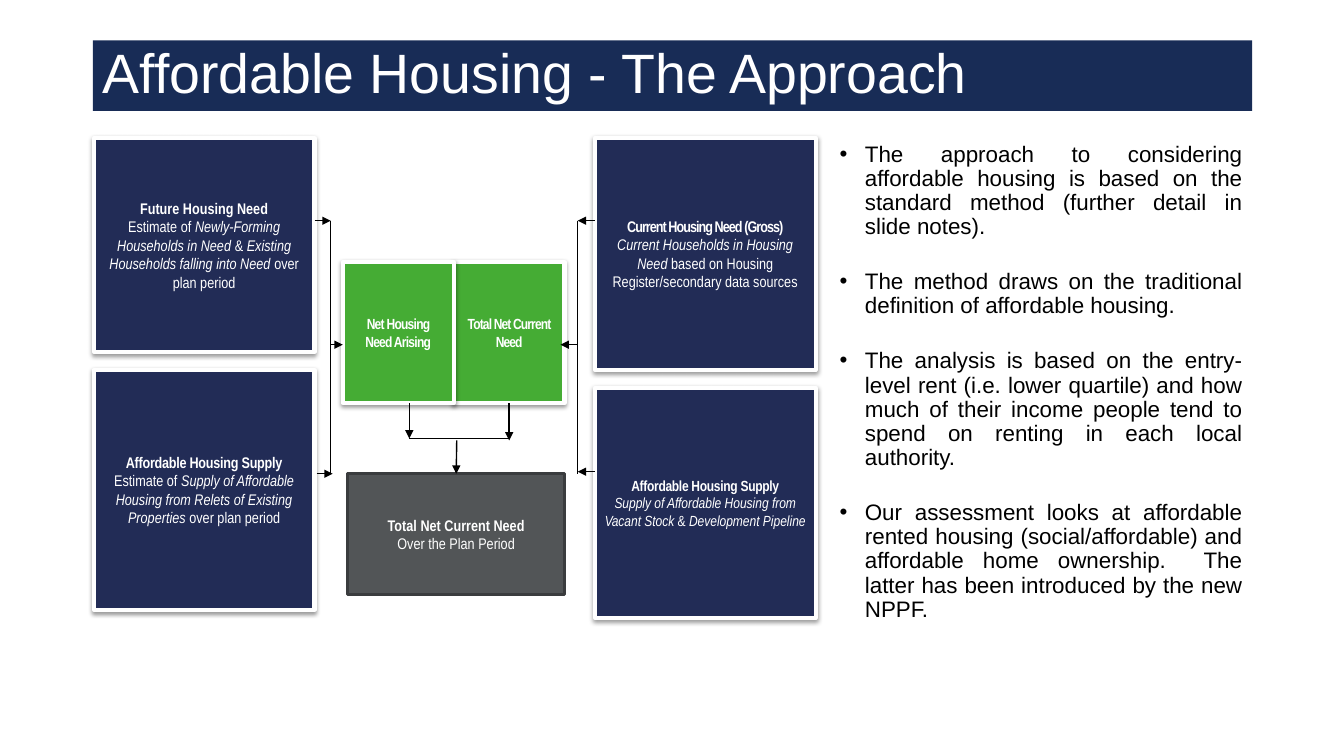
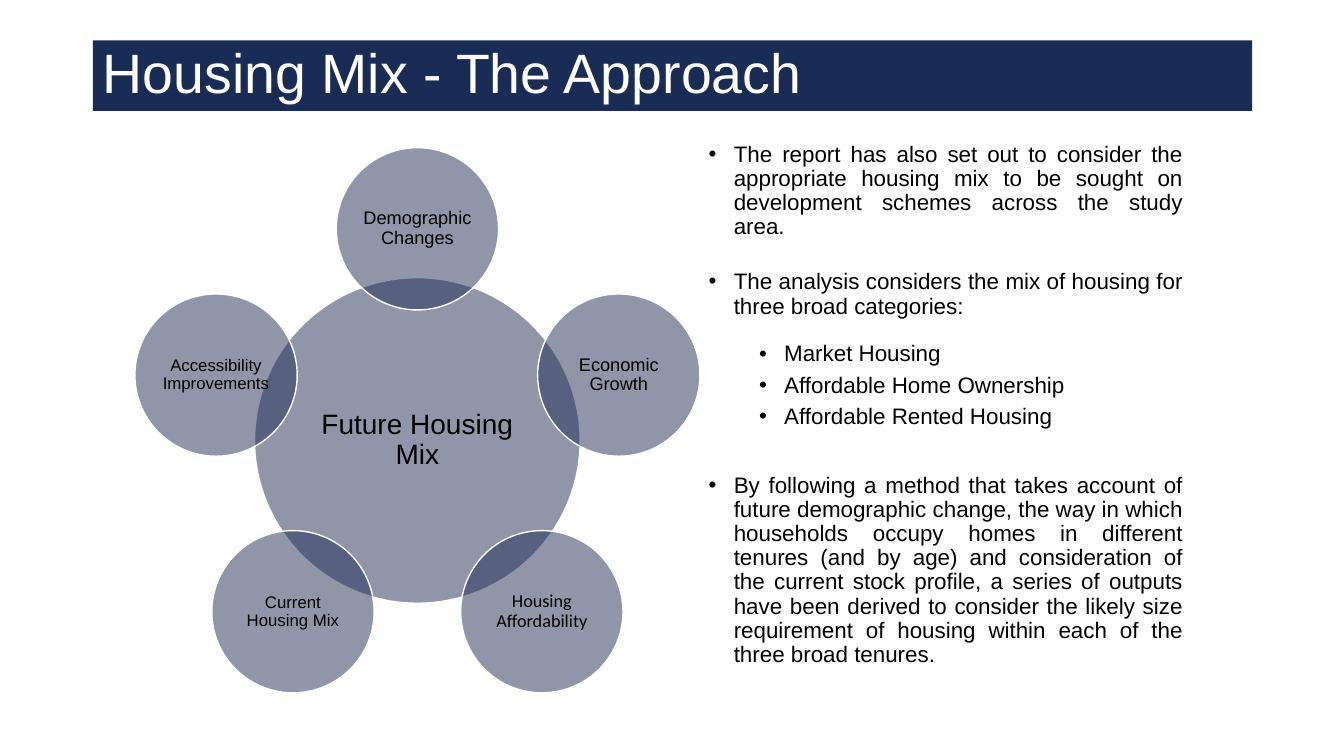
import math

from lxml import etree
from pptx import Presentation, util as u
from pptx.dml import color
from pptx.enum import shapes, text
from pptx.oxml import ns

WIDTH, HEIGHT = 13.33, 7.5
BAND = (0.92, 0.4, 11.5, 0.7)
NAVY, BAND_NAVY, GREEN = "222C56", "182C56", "45AC34"
GREY, DARK_GREY, WHITE, BLACK = "525557", "3A3C3E", "FFFFFF", "000000"
TOP = 1.37

AFFORDABLE = {
    "title": "Affordable Housing - The Approach",
    "place": (8.23, TOP, 4.19, 4.76),
    "points": [
        (0, 0, 12, "The approach to considering affordable housing is based on the standard method (further detail in slide notes)."),
        (0, 10, 12, "The method draws on the traditional definition of affordable housing."),
        (0, 10, 12, "The analysis is based on the entry-level rent (i.e. lower quartile) and how much of their income people tend to spend on renting in each local authority."),
        (0, 10, 12, "Our assessment looks at affordable rented housing (social/affordable) and affordable home ownership.  The latter has been introduced by the new NPPF."),
    ],
}
MIX = {
    "title": "Housing Mix - The Approach",
    "place": (6.93, TOP, 4.9, 4.58),
    "points": [
        (0, 0, 12, "The report has also set out to consider the appropriate housing mix to be sought on development schemes across the study area."),
        (0, 10, 12, "The analysis considers the mix of housing for three broad categories:"),
        (1, 5, 0, "Market Housing"),
        (1, 5, 0, "Affordable Home Ownership"),
        (1, 5, 0, "Affordable Rented Housing"),
        (0, 32, 0, "By following a method that takes account of future demographic change, the way in which households occupy homes in different tenures (and by age) and consideration of the current stock profile, a series of outputs have been derived to consider the likely size requirement of housing within each of the three broad tenures."),
    ],
}

LEFT, RIGHT, NEED_WIDTH = 0.93, 5.9, 2.19
NET_LEFT, NET_TOP, NET_WIDTH, NET_HEIGHT = 3.4, 2.6, 1.1, 1.4
NET_MIDDLE = NET_LEFT + NET_WIDTH
NEEDS = {
    "future": ((LEFT, TOP, NEED_WIDTH, 2.12), NAVY, 11, 0, "Future Housing Need",
               "Estimate of *Newly-Forming Households in Need* & *Existing Households falling into Need* over plan period"),
    "relets": ((LEFT, 3.67, NEED_WIDTH, 2.38), NAVY, 11, -20, "Affordable Housing Supply",
               "Estimate of *Supply of Affordable Housing from Relets of Existing Properties* over plan period"),
    "pipeline": ((RIGHT, 3.85, NEED_WIDTH, 2.28), NAVY, 10.5, -20, "Affordable Housing Supply",
                 "*Supply of Affordable Housing from Vacant Stock* & *Development Pipeline*"),
    "current": ((RIGHT, TOP, NEED_WIDTH, 2.3), NAVY, 11, -70, "Current Housing Need (Gross)",
                "*Current Households in Housing Need* based on Housing Register/secondary data sources"),
    "net current": ((NET_MIDDLE, NET_TOP, NET_WIDTH, NET_HEIGHT), GREEN, 10.5, -60, "Total Net Current Need", ""),
    "net arising": ((NET_LEFT, NET_TOP, NET_WIDTH, NET_HEIGHT), GREEN, 10.5, -50, "Net Housing Need Arising", ""),
    "total": ((3.45, 4.7, 2.15, 1.2), GREY, 11, 0, "Total Net Current Need", "Over the Plan Period"),
}
LEFT_SPINE, RIGHT_SPINE = 3.28, 5.73
UPPER, ENTRY, LOWER, MERGE = 2.19, 3.42, 4.7, 4.35
SPINES = [
    (LEFT_SPINE, UPPER, LEFT_SPINE, LOWER),
    (RIGHT_SPINE, UPPER, RIGHT_SPINE, LOWER),
    (4.06, MERGE, 5.06, MERGE),
]
ARROWS = [
    (LEFT + NEED_WIDTH, UPPER, LEFT_SPINE, UPPER),
    (LEFT_SPINE, ENTRY, NET_LEFT, ENTRY),
    (3.14, LOWER, 3.3, LOWER),
    (RIGHT, UPPER, RIGHT_SPINE, UPPER),
    (RIGHT_SPINE, ENTRY, 5.56, ENTRY),
    (RIGHT, 4.68, RIGHT_SPINE, 4.68),
    (4.06, NET_TOP + NET_HEIGHT, 4.06, MERGE),
]

CORE = ("Future Housing Mix", 20, "Arial")
FACTORS = [
    ("Demographic Changes", 13, "Arial"),
    ("Economic Growth", 13, "Arial"),
    ("Housing Affordability", 13, "Calibri"),
    ("Current Housing Mix", 12, "Arial"),
    ("Accessibility Improvements", 12, "Arial"),
]
CENTRE_X, CENTRE_Y, ORBIT = 4.14, 4.37, 2.1
CORE_SIZE, FACTOR_SIZE = 3.23, 1.61


def rgb(value):
    return color.RGBColor.from_string(value)


def assign(target, **values):
    for name, value in values.items():
        setattr(target, name, value)


def inches(lengths):
    return [u.Inches(length) for length in lengths]


def add_xml(parent, tag, **attributes):
    return etree.SubElement(parent, ns.qn(tag), attributes)


def style_font(font, size, face, ink, **values):
    assign(font, size=u.Pt(size), name=face, **values)
    font.color.rgb = rgb(ink)


def paint(shape, fill, line=None, width=1):
    shape.fill.solid()
    shape.fill.fore_color.rgb = rgb(fill)
    if line:
        shape.line.color.rgb = rgb(line)
        shape.line.width = u.Pt(width)
    else:
        shape.line.fill.background()


def add_block(slide, kind, place, fill, line, width):
    block = slide.shapes.add_shape(kind, *inches(place))
    block.shadow.inherit = False
    paint(block, fill, line, width)
    assign(block.text_frame, word_wrap=True, vertical_anchor=text.MSO_ANCHOR.MIDDLE)
    return block


def add_slide(deck, content):
    slide = deck.slides.add_slide(deck.slide_layouts[5])
    title = slide.shapes.title
    assign(title, **dict(zip(("left", "top", "width", "height"), inches(BAND))))
    paint(title, BAND_NAVY)
    title.text_frame.text = content["title"]
    assign(title.text_frame, word_wrap=True, auto_size=text.MSO_AUTO_SIZE.NONE,
           vertical_anchor=text.MSO_ANCHOR.MIDDLE)
    heading = title.text_frame.paragraphs[0]
    assign(heading, alignment=text.PP_ALIGN.LEFT, line_spacing=0.9)
    style_font(heading.font, 39.6, "Arial", WHITE)

    body = slide.shapes.add_textbox(*inches(content["place"])).text_frame
    body.word_wrap = True
    for index, (level, before, after, words) in enumerate(content["points"]):
        point = body.add_paragraph() if index else body.paragraphs[0]
        point.text = words
        properties = point._p.get_or_add_pPr()
        properties.set("marL", str(u.Inches(0.25 + 0.5 * level)))
        properties.set("indent", str(u.Inches(-0.25)))
        add_xml(properties, "a:buFont", typeface="Arial")
        add_xml(properties, "a:buChar", char="•")
        assign(point, level=level, alignment=text.PP_ALIGN.JUSTIFY, line_spacing=0.9,
               space_before=u.Pt(before), space_after=u.Pt(after))
        style_font(point.font, 16, "Arial", BLACK)
    return slide


def add_need(slide, place, fill, size, spacing, heading, detail):
    is_total = fill == GREY
    line, width = (DARK_GREY, 2) if is_total else (WHITE, 3)
    need = add_block(slide, shapes.MSO_SHAPE.RECTANGLE, place, fill, line, width)
    if not is_total:
        effects = need.element.spPr.find(ns.qn("a:effectLst"))
        shadow = add_xml(effects, "a:outerShdw", blurRad=str(u.Pt(3.1)), dist=str(u.Pt(1.6)),
                         dir="5400000", rotWithShape="0")
        add_xml(add_xml(shadow, "a:srgbClr", val=BLACK), "a:alpha", val="38000")

    lead = need.text_frame.paragraphs[0]
    lead.alignment = text.PP_ALIGN.CENTER
    run = lead.add_run()
    run.text = heading
    style_font(run.font, size, "Arial Narrow", WHITE, bold=True)
    run.font._element.set("spc", str(spacing))
    if detail:
        explanation = need.text_frame.add_paragraph()
        explanation.alignment = text.PP_ALIGN.CENTER
        for index, words in enumerate(detail.split("*")):
            if words:
                run = explanation.add_run()
                run.text = words
                style_font(run.font, size, "Arial Narrow", WHITE, italic=index % 2 == 1)
    return need


def add_link(slide, ends, arrow):
    link = slide.shapes.add_connector(shapes.MSO_CONNECTOR.STRAIGHT, *inches(ends))
    link.line.color.rgb = rgb(BLACK)
    link.line.width = u.Pt(1)
    if arrow:
        add_xml(link.line._get_or_add_ln(), "a:tailEnd", type="triangle")
    add_xml(link._element.spPr, "a:effectLst")
    return link


def add_circle(slide, x, y, size, inset, words, points, face):
    place = (x - size / 2, y - size / 2, size, size)
    circle = add_block(slide, shapes.MSO_SHAPE.OVAL, place, NAVY, WHITE, 1)
    tint = circle.element.spPr.find(ns.qn("a:solidFill"))[0]
    add_xml(tint, "a:alpha", val="50000")
    frame = circle.text_frame
    for side in ("left", "top", "right", "bottom"):
        setattr(frame, f"margin_{side}", u.Inches(inset))
    frame.text = words
    label = frame.paragraphs[0]
    assign(label, alignment=text.PP_ALIGN.CENTER, line_spacing=0.9)
    style_font(label.font, points, face, BLACK)


def build_affordable(deck):
    slide = add_slide(deck, AFFORDABLE)
    needs = {name: add_need(slide, *need) for name, need in NEEDS.items()}
    for ends in SPINES:
        add_link(slide, ends, False)
    for ends in ARROWS:
        add_link(slide, ends, True)
    net_centre = NET_MIDDLE + NET_WIDTH / 2
    from_net = add_link(slide, (net_centre, NET_TOP + NET_HEIGHT, net_centre, 4.37), True)
    from_net.begin_connect(needs["net current"], 2)
    to_total = add_link(slide, (4.53, 4.37, 4.53, 4.7), True)
    to_total.end_connect(needs["total"], 0)


def build_mix(deck):
    slide = add_slide(deck, MIX)
    add_circle(slide, CENTRE_X, CENTRE_Y, CORE_SIZE, 0.03, *CORE)
    for index, factor in enumerate(FACTORS):
        angle = math.tau * index / len(FACTORS)
        add_circle(slide, CENTRE_X + ORBIT * math.sin(angle), CENTRE_Y - ORBIT * math.cos(angle),
                   FACTOR_SIZE, 0.02, *factor)


def main():
    deck = Presentation()
    assign(deck, slide_width=u.Inches(WIDTH), slide_height=u.Inches(HEIGHT))
    build_affordable(deck)
    build_mix(deck)
    deck.save("out.pptx")


if __name__ == "__main__":
    main()
